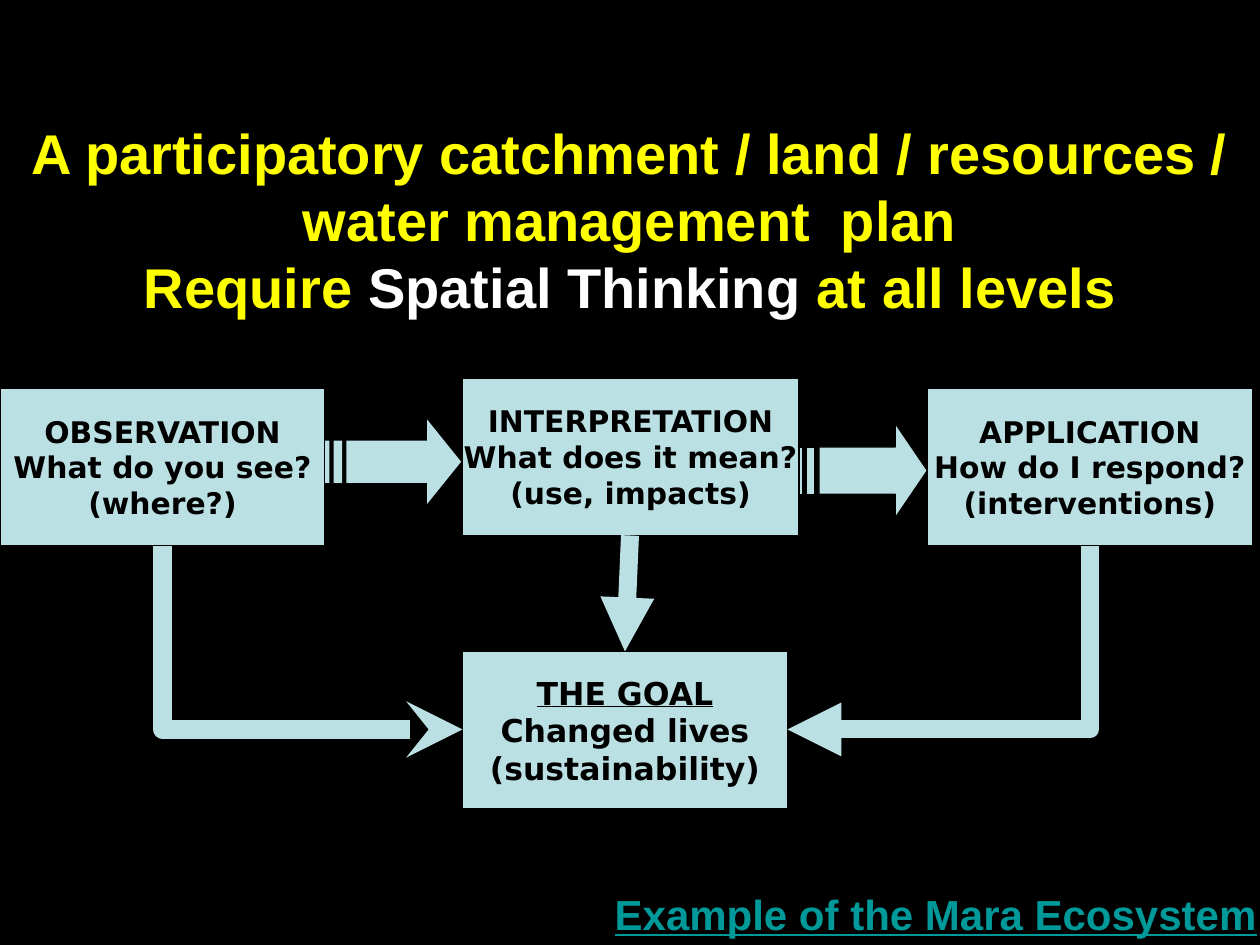
from dataclasses import dataclass

from lxml import etree
from pptx import Presentation
from pptx.dml.color import RGBColor
from pptx.enum.shapes import MSO_CONNECTOR, MSO_SHAPE
from pptx.enum.text import MSO_ANCHOR, MSO_AUTO_SIZE, PP_ALIGN
from pptx.oxml.ns import qn
from pptx.util import Inches, Pt

RECTANGLE = MSO_SHAPE.RECTANGLE
STRAIGHT = MSO_CONNECTOR.STRAIGHT
ELBOW = MSO_CONNECTOR.ELBOW
CENTER = PP_ALIGN.CENTER
LEFT = PP_ALIGN.LEFT
MIDDLE = MSO_ANCHOR.MIDDLE
TOP = MSO_ANCHOR.TOP
GROW = MSO_AUTO_SIZE.SHAPE_TO_FIT_TEXT

COLORS = {
    "black": "000000",
    "panel": "BBE0E3",
    "yellow": "FFFF00",
    "white": "FFFFFF",
    "teal": "009999",
}
STEP_FONT = {"name": "DejaVu Sans", "size": Pt(17), "bold": True}
GOAL_FONT = STEP_FONT | {"size": Pt(18)}
TITLE_FONT = {"name": "Arial", "size": Pt(32), "bold": True}
EXAMPLE_FONT = TITLE_FONT | {"size": Pt(24), "underline": True}


@dataclass
class Phrase:
    text: str
    color: str = "black"
    underline: bool = False


@dataclass
class Panel:
    left: float
    top: float
    width: float
    lines: list[Phrase]
    font: dict
    height: float = 1.25


@dataclass
class StripedArrow:
    left: float
    top: float
    width: float
    height: float
    outlined: bool


@dataclass
class Link:
    start: tuple[float, float]
    end: tuple[float, float]
    color: str
    weight: float
    head: str = "triangle"
    bent: bool = False


PANELS = [
    Panel(0, 3.08, 2.58, [Phrase("OBSERVATION"), Phrase("What do you see?"),
                          Phrase("(where?)")], STEP_FONT),
    Panel(3.67, 5.17, 2.58, [Phrase("THE GOAL", underline=True), Phrase("Changed lives"),
                             Phrase("(sustainability)")], GOAL_FONT),
    Panel(7.36, 3.08, 2.58, [Phrase("APPLICATION"), Phrase("How do I respond?"),
                             Phrase("(interventions)")], STEP_FONT),
    Panel(3.67, 3, 2.67, [Phrase("INTERPRETATION"), Phrase("What does it mean?"),
                          Phrase("(use, impacts)")], STEP_FONT),
]
STEP_LINK = Link((2.58, 3.67), (3.67, 3.67), "black", 0.75)
STRIPED_ARROWS = [
    StripedArrow(2.58, 3.33, 1.08, 0.67, False),
    StripedArrow(6.34, 3.36, 1.02, 0.75, True),
]
GOAL_LINKS = [
    Link((1.29, 4.33), (3.67, 5.79), "panel", 10.75, "stealth", True),
    Link((8.65, 4.33), (6.25, 5.79), "panel", 10.25, bent=True),
    Link((5, 4.25), (4.96, 5.17), "panel", 10.25),
]
TITLE = [
    [Phrase("A participatory catchment / land / resources / water management  plan", "yellow")],
    [Phrase("Require ", "yellow"), Phrase("Spatial Thinking ", "white"),
     Phrase("at all levels", "yellow")],
]
EXAMPLE = [[Phrase("Example of the Mara Ecosystem", "teal", True)]]


def rgb(color: str) -> RGBColor:
    return RGBColor.from_string(COLORS[color])


def paint(shape, outlined: bool) -> None:
    shape.shadow.inherit = False
    shape.fill.solid()
    shape.fill.fore_color.rgb = rgb("panel")
    if outlined:
        shape.line.color.rgb = rgb("black")
        shape.line.width = Pt(0.75)
    else:
        shape.line.fill.background()


def write(frame, paragraphs: list[list[Phrase]], font: dict, align, anchor, wrap: bool) -> None:
    frame.word_wrap = wrap
    frame.vertical_anchor = anchor
    for index, phrases in enumerate(paragraphs):
        paragraph = frame.add_paragraph() if index else frame.paragraphs[0]
        paragraph.alignment = align
        for phrase in phrases:
            run = paragraph.add_run()
            run.text = phrase.text
            for name, value in (font | {"underline": phrase.underline}).items():
                setattr(run.font, name, value)
            run.font.color.rgb = rgb(phrase.color)


def draw_panel(slide, panel: Panel) -> None:
    shape = slide.shapes.add_shape(RECTANGLE, Inches(panel.left), Inches(panel.top),
                                   Inches(panel.width), Inches(panel.height))
    paint(shape, True)
    write(shape.text_frame, [[line] for line in panel.lines], panel.font,
          CENTER, MIDDLE, False)


def draw_striped_arrow(slide, arrow: StripedArrow) -> None:
    def place(x: float, y: float) -> tuple[int, int]:
        return (Inches(arrow.left + x * arrow.width),
                Inches(arrow.top + y * arrow.height))

    body = 5 / 32
    head = [(0.75, 0), (0.75, 0.25), (body, 0.25), (body, 0.75),
            (0.75, 0.75), (0.75, 1), (1, 0.5)]
    stripes = [[(a, 0.25), (a, 0.75), (b, 0.75), (b, 0.25)]
               for a, b in ((1 / 16, 1 / 8), (0, 1 / 32))]
    builder = slide.shapes.build_freeform(*place(*head[0]), scale=1.0)
    builder.add_line_segments([place(*point) for point in head[1:]], close=True)
    for stripe in stripes:
        builder.move_to(*place(*stripe[0]))
        builder.add_line_segments([place(*point) for point in stripe[1:]], close=True)
    paint(builder.convert_to_shape(), arrow.outlined)


def draw_link(slide, link: Link) -> None:
    (x1, y1), (x2, y2) = link.start, link.end
    rightward = x2 > x1
    if link.bent:
        middle_x, middle_y = (x1 + x2) / 2, (y1 + y2) / 2
        half_width, half_height = (y2 - y1) / 2, abs(x2 - x1) / 2
        side = 1 if rightward else -1
        x1, x2 = middle_x + side * half_width, middle_x - side * half_width
        y1, y2 = middle_y - half_height, middle_y + half_height
    connector = slide.shapes.add_connector(ELBOW if link.bent else STRAIGHT, Inches(x1),
                                           Inches(y1), Inches(x2), Inches(y2))
    connector.line.color.rgb = rgb(link.color)
    connector.line.width = Pt(link.weight)
    properties = connector.line._get_or_add_ln().getparent()
    etree.SubElement(properties.find(qn("a:ln")), qn("a:tailEnd"), type=link.head)
    etree.SubElement(properties, qn("a:effectLst"))
    if link.bent:
        properties.find(qn("a:prstGeom")).set("prst", "bentConnector2")
        properties.find(qn("a:xfrm")).set("rot", str((270 if rightward else 90) * 60000))


def draw_text(slide, left: float, top: float, width: float, height: float,
              paragraphs: list[list[Phrase]], font: dict, align, wrap: bool) -> None:
    box = slide.shapes.add_textbox(Inches(left), Inches(top), Inches(width), Inches(height))
    write(box.text_frame, paragraphs, font, align, TOP, wrap)
    box.text_frame.auto_size = GROW


def main() -> None:
    deck = Presentation()
    deck.slide_width, deck.slide_height = Inches(10), Inches(7.5)
    slide = deck.slides.add_slide(deck.slide_layouts[6])
    slide.background.fill.solid()
    slide.background.fill.fore_color.rgb = rgb("black")
    for panel in PANELS:
        draw_panel(slide, panel)
    draw_link(slide, STEP_LINK)
    for arrow in STRIPED_ARROWS:
        draw_striped_arrow(slide, arrow)
    for link in GOAL_LINKS:
        draw_link(slide, link)
    draw_text(slide, 0, 0.89, 10, 1.72, TITLE, TITLE_FONT, CENTER, True)
    draw_text(slide, 4.78, 7, 5.35, 0.5, EXAMPLE, EXAMPLE_FONT, LEFT, False)
    deck.save("out.pptx")


if __name__ == "__main__":
    main()
